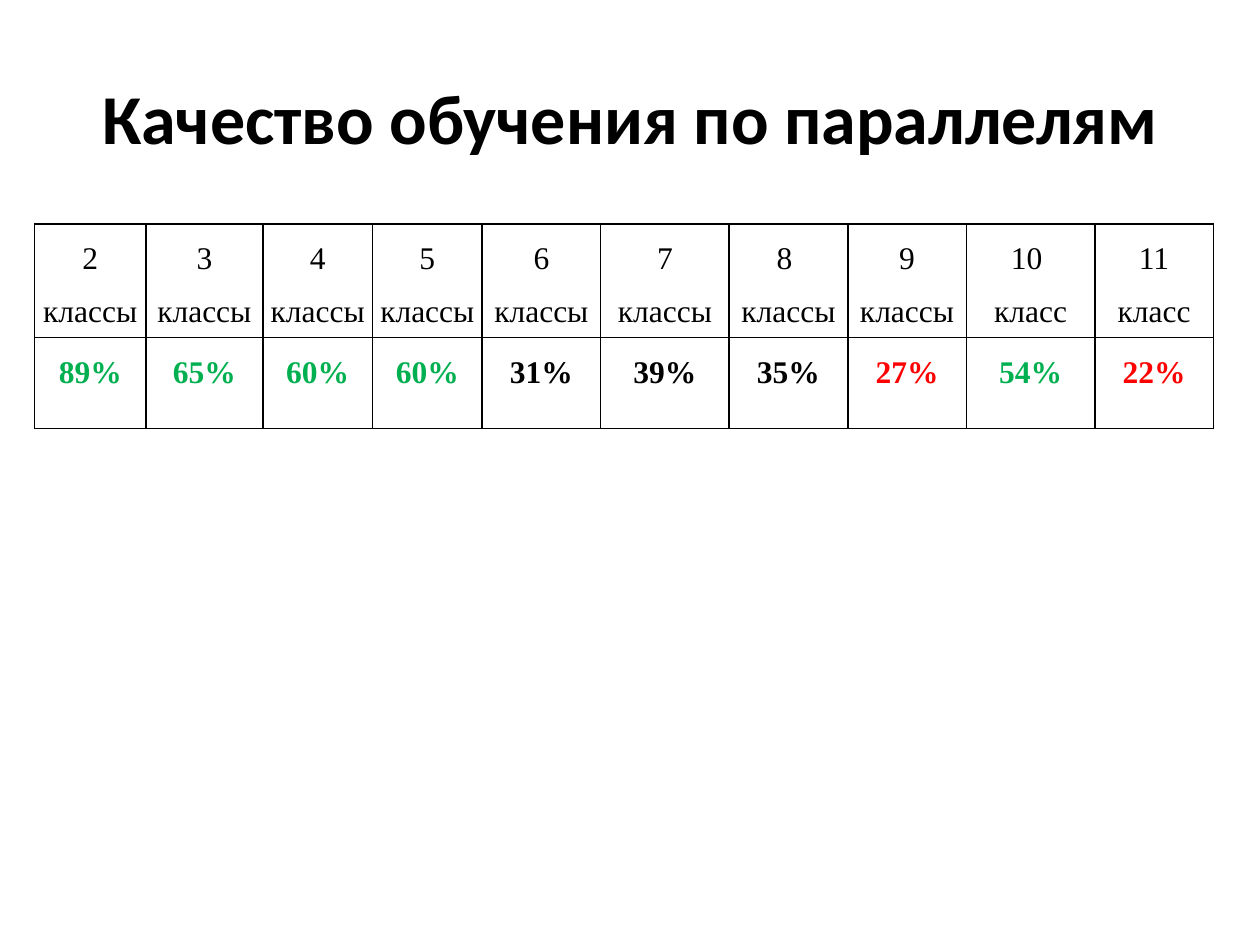
from lxml.etree import SubElement
from pptx import Presentation
from pptx.dml.color import RGBColor
from pptx.enum.text import MSO_ANCHOR, PP_ALIGN
from pptx.oxml.ns import qn
from pptx.util import Cm, Pt

COLORS = {"black": "000000", "green": "00B050", "red": "FF0000"}
COLUMNS = [
    (2.24, ["2 классы"], "89%", "green"),
    (2.36, ["3 классы"], "65%", "green"),
    (2.21, ["4 классы"], "60%", "green"),
    (2.21, ["5", "классы"], "60%", "green"),
    (2.39, ["6 классы"], "31%", "black"),
    (2.59, ["7 классы"], "39%", "black"),
    (2.39, ["8 ", "классы"], "35%", "black"),
    (2.39, ["9 классы"], "27%", "red"),
    (2.59, ["10 ", "класс"], "54%", "green"),
    (2.39, ["11 класс"], "22%", "red"),
]


def add_text(p, text, size, font, color, bold):
    p.alignment = PP_ALIGN.CENTER
    r = p.add_run()
    r.text = text
    r.font.size = Pt(size)
    r.font.name = font
    r.font.bold = bold
    r.font.color.rgb = RGBColor.from_string(COLORS[color])


def fill_cell(cell, lines, color, bold):
    cell.margin_left = cell.margin_right = Cm(0.13)
    cell.margin_top = cell.margin_bottom = 0
    tf = cell.text_frame
    for i, line in enumerate(lines):
        p = tf.add_paragraph() if i else tf.paragraphs[0]
        p.line_spacing = 1.5
        add_text(p, line, 18, "Times New Roman", color, bold)
    tcPr = cell._tc.get_or_add_tcPr()
    for side in ("a:lnL", "a:lnR", "a:lnT", "a:lnB"):
        ln = SubElement(tcPr, qn(side), w=str(Pt(1)))
        fill = SubElement(ln, qn("a:solidFill"))
        SubElement(fill, qn("a:srgbClr"), val=COLORS["black"])
    cell.fill.background()


prs = Presentation()
prs.slide_width = Cm(25.4)
prs.slide_height = Cm(19.05)
s = prs.slides.add_slide(prs.slide_layouts[6])

title = s.shapes.add_textbox(Cm(1.27), Cm(0.76), Cm(22.86), Cm(3.18))
tf = title.text_frame
tf.word_wrap = True
tf.vertical_anchor = MSO_ANCHOR.MIDDLE
add_text(tf.paragraphs[0], "Качество обучения по параллелям", 40, "Calibri", "black", True)

width = sum(column[0] for column in COLUMNS)
table = s.shapes.add_table(2, len(COLUMNS), Cm(0.7), Cm(4.52), Cm(width), Cm(3.66)).table
table.first_row = False
table.horz_banding = False
for row in table.rows:
    row.height = Cm(1.83)
for i, (col_width, grade, quality, color) in enumerate(COLUMNS):
    table.columns[i].width = Cm(col_width)
    fill_cell(table.cell(0, i), grade, "black", False)
    fill_cell(table.cell(1, i), [quality], color, True)

prs.save("out.pptx")
